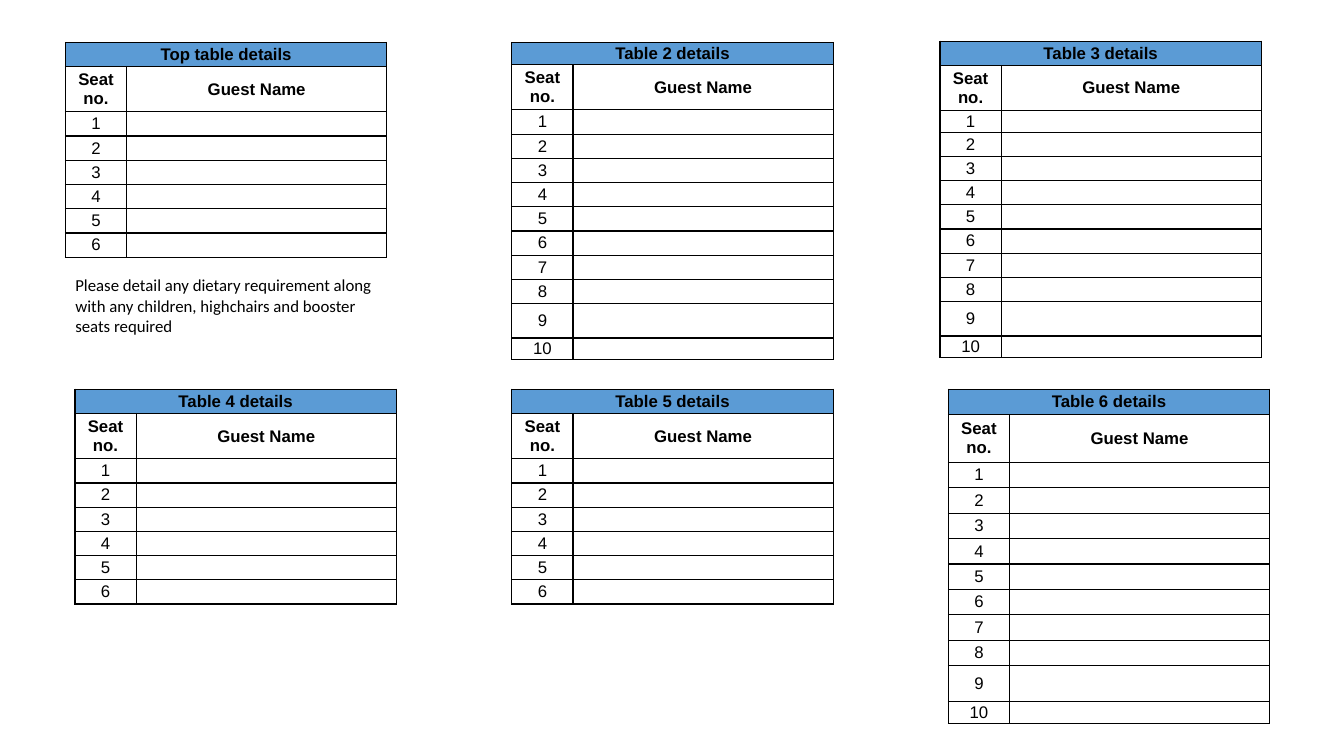
from lxml.etree import SubElement
from pptx import Presentation
from pptx.dml.color import RGBColor
from pptx.enum.text import MSO_ANCHOR, MSO_AUTO_SIZE, PP_ALIGN
from pptx.oxml.ns import qn
from pptx.util import Cm, Pt

BLACK = "000000"
BLUE = "5B9BD5"
COLS = (1.54, 6.56)
SHORT = [0.61, 1.14] + [0.61] * 6
LONG_2 = [0.56, 1.14] + [0.61] * 8 + [0.87, 0.54]
LONG_3 = [0.61, 1.14, 0.54] + [0.61] * 7 + [0.87, 0.54]
LONG_6 = [0.64, 1.2] + [0.64] * 8 + [0.91, 0.56]


def color(code):
    """Turn a hex string into a colour."""
    return RGBColor.from_string(code)


def add_run(para, text, face, bold=False):
    """Add one black 12 point run."""
    run = para.add_run()
    run.text = text
    run.font.name = face
    run.font.size = Pt(12)
    run.font.bold = bold
    run.font.color.rgb = color(BLACK)


def add_edges(cell):
    """Draw a thin black line on all sides of a cell."""
    props = cell._tc.get_or_add_tcPr()
    for side in ("a:lnL", "a:lnR", "a:lnT", "a:lnB"):
        line = SubElement(props, qn(side), w=str(Pt(1)))
        fill = SubElement(line, qn("a:solidFill"))
        SubElement(fill, qn("a:srgbClr"), val=BLACK)


def fill_cell(cell, text, bold, back=None):
    """Style a cell and write its text."""
    add_edges(cell)
    cell.margin_left = cell.margin_right = Cm(0)
    cell.margin_top = cell.margin_bottom = Cm(0)
    cell.vertical_anchor = MSO_ANCHOR.MIDDLE
    if back:
        cell.fill.solid()
        cell.fill.fore_color.rgb = color(back)
    else:
        cell.fill.background()
    para = cell.text_frame.paragraphs[0]
    para.alignment = PP_ALIGN.CENTER
    if text:
        add_run(para, text, "Arial", bold)
    else:
        SubElement(para._p, qn("a:endParaRPr"), sz="1200")


def add_seats(slide, title, left, top, rows):
    """Add one seating table with a numbered row per guest."""
    frame = slide.shapes.add_table(len(rows), len(COLS), Cm(left), Cm(top),
                                   Cm(sum(COLS)), Cm(sum(rows)))
    table = frame.table
    table.first_row = table.horz_banding = False
    for col, width in zip(table.columns, COLS):
        col.width = Cm(width)
    for row, height in zip(table.rows, rows):
        row.height = Cm(height)
    table.cell(0, 0).merge(table.cell(0, 1))
    lines = [(title, ""), ("Seat no.", "Guest Name")]
    lines += [(str(seat), "") for seat in range(1, len(rows) - 1)]
    for i, line in enumerate(lines):
        for j, text in enumerate(line):
            fill_cell(table.cell(i, j), text, i < 2, None if i else BLUE)


def add_note(slide, text, left, top, width, height):
    """Add a wrapped text box."""
    box = slide.shapes.add_textbox(Cm(left), Cm(top), Cm(width), Cm(height))
    frame = box.text_frame
    frame.word_wrap = True
    frame.auto_size = MSO_AUTO_SIZE.SHAPE_TO_FIT_TEXT
    add_run(frame.paragraphs[0], text, "Calibri")


def main():
    """Build the seating plan slide."""
    deck = Presentation()
    deck.slide_width, deck.slide_height = Cm(33.87), Cm(19.05)
    slide = deck.slides.add_slide(deck.slide_layouts[6])
    add_seats(slide, "Top table details", 1.65, 1.07, SHORT)
    add_seats(slide, "Table 6 details", 23.9, 9.81, LONG_6)
    add_seats(slide, "Table 2 details", 12.9, 1.07, LONG_2)
    add_seats(slide, "Table 3 details", 23.69, 1.04, LONG_3)
    add_note(slide, "Please detail any dietary requirement along with any "
             "children, highchairs and booster seats required",
             1.65, 6.81, 8.08, 2.39)
    add_seats(slide, "Table 5 details", 12.9, 9.81, SHORT)
    add_seats(slide, "Table 4 details", 1.89, 9.81, SHORT)
    deck.save("out.pptx")


if __name__ == "__main__":
    main()
